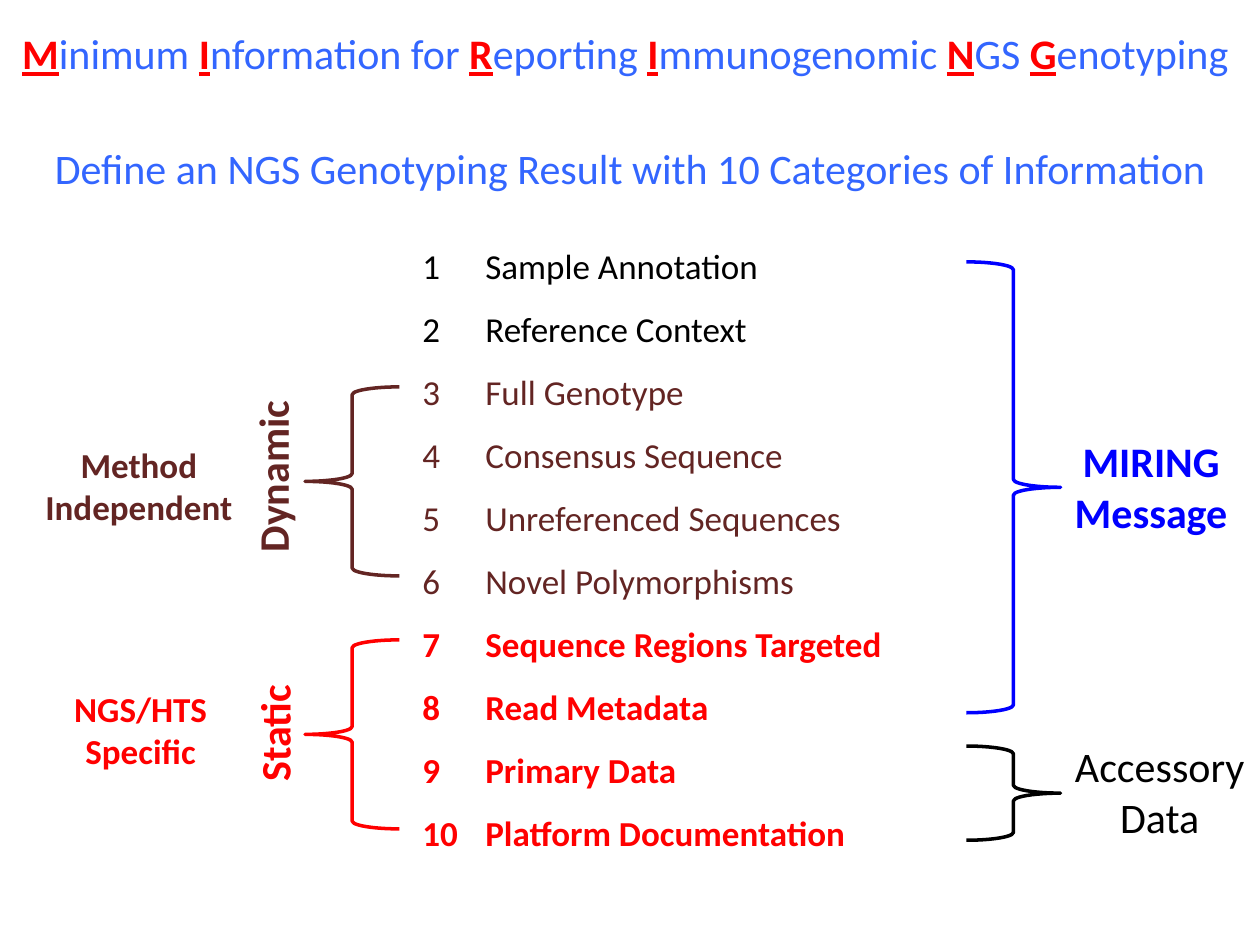
"""Build a slide on the ten information categories of an NGS genotyping result."""
from dataclasses import dataclass

from lxml.etree import SubElement
from pptx import Presentation
from pptx.dml.color import RGBColor as Rgb
from pptx.enum.shapes import MSO_SHAPE as Shape
from pptx.enum.text import MSO_ANCHOR as Anchor, MSO_AUTO_SIZE as AutoSize, PP_ALIGN as Align
from pptx.oxml.ns import qn
from pptx.util import Cm, Pt


@dataclass(frozen=True)
class Theme:
    font: str = "Calibri"
    heading: str = "3366FF"
    plain: str = "000000"
    dynamic: str = "632523"
    static: str = "FF0000"
    message: str = "0000FF"
    large: int = 24
    small: int = 20
    line: int = 2


THEME = Theme()

TITLE = [("M", "inimum "), ("I", "nformation for "), ("R", "eporting "),
         ("I", "mmunogenomic "), ("N", "GS "), ("G", "enotyping ")]
TITLE_PLACE = (0, 0.43, 25.4, 1.27)

LEAD = "Define an NGS Genotyping Result with 10 Categories of Information"
BODY_PLACE = (0.64, 2.74, 24.13, 14.71)
CATEGORY_GROUPS = [
    (THEME.plain, False, ["Sample Annotation", "Reference Context"]),
    (THEME.dynamic, False, ["Full Genotype", "Consensus Sequence",
                            "Unreferenced Sequences", "Novel Polymorphisms"]),
    (THEME.static, True, ["Sequence Regions Targeted", "Read Metadata",
                          "Primary Data", "Platform Documentation"]),
]
LIST_INDENT, NUMBER_HANG = Cm(8.89), Cm(1.27)
ROW_PITCH, LEAD_GAP = Pt(36), Pt(17.5)

BRACE_WIDTH = 1.9
LEFT_BRACE, RIGHT_BRACE = (Shape.LEFT_BRACE, 6.15), (Shape.RIGHT_BRACE, 19.48)
BRACES = [
    (LEFT_BRACE, 7.8, 3.81, THEME.dynamic),
    (LEFT_BRACE, 12.9, 3.81, THEME.static),
    (RIGHT_BRACE, 5.28, 9.09, THEME.message),
    (RIGHT_BRACE, 15.04, 1.9, THEME.plain),
]

LABELS = [
    (["Dynamic"], (3.68, 8.97, 3.61, 1.27), 270, THEME.large, THEME.dynamic, True),
    (["Static"], (4.27, 14.15, 2.51, 1.27), 270, THEME.large, THEME.static, True),
    (["MIRING", "Message"], (21.39, 8.66, 3.63, 2.31), 0, THEME.large, THEME.message, True),
    (["Accessory", "Data"], (21.36, 14.81, 4.04, 2.31), 0, THEME.large, THEME.plain, False),
    (["NGS/HTS", "Specific"], (1.22, 13.74, 3.23, 1.96), 0, THEME.small, THEME.static, True),
    (["Method", "Independent"], (0.64, 8.81, 4.32, 1.96), 0, THEME.small, THEME.dynamic, True),
]


def set_values(target, values):
    for name, value in values.items():
        setattr(target, name, value)


def place(box, lengths):
    set_values(box, dict(zip(("left", "top", "width", "height"), map(Cm, lengths))))


def add_span(para, text, size, color, bold=False, underline=False):
    span = para.add_run()
    span.text = text
    set_values(span.font, {"name": THEME.font, "size": Pt(size),
                           "bold": bold, "underline": underline})
    span.font.color.rgb = Rgb.from_string(color)


def set_list_format(para, indent, hang, bullet, **options):
    properties = para._p.get_or_add_pPr()
    properties.set("marL", str(int(indent)))
    properties.set("indent", str(-int(hang)))
    SubElement(properties, qn(bullet), options)


def fill_title(title):
    place(title, TITLE_PLACE)
    set_values(title.text_frame, {"word_wrap": True, "auto_size": AutoSize.NONE,
                                  "vertical_anchor": Anchor.TOP})
    para = title.text_frame.paragraphs[0]
    para.alignment = Align.CENTER
    for initial, rest in TITLE:
        add_span(para, initial, THEME.large, THEME.static, True, True)
        add_span(para, rest, THEME.large, THEME.heading)


def fill_body(body):
    place(body, BODY_PLACE)
    frame = body.text_frame
    set_values(frame, {"word_wrap": True, "auto_size": AutoSize.NONE})
    lead = frame.paragraphs[0]
    set_values(lead, {"alignment": Align.CENTER, "space_before": Pt(0),
                      "space_after": LEAD_GAP})
    set_list_format(lead, 0, 0, "a:buNone")
    add_span(lead, LEAD, THEME.large, THEME.heading)
    for color, bold, categories in CATEGORY_GROUPS:
        for category in categories:
            para = frame.add_paragraph()
            set_values(para, {"line_spacing": ROW_PITCH, "space_before": Pt(0),
                              "space_after": Pt(0)})
            set_list_format(para, LIST_INDENT, NUMBER_HANG, "a:buFont", typeface="+mj-lt")
            set_list_format(para, LIST_INDENT, NUMBER_HANG, "a:buAutoNum", type="arabicPlain")
            add_span(para, category, THEME.small, color, bold)


def add_brace(page, kind, top, height, color):
    preset, left = kind
    brace = page.shapes.add_shape(preset, *map(Cm, (left, top, BRACE_WIDTH, height)))
    brace.shadow.inherit = False
    brace.fill.background()
    brace.line.color.rgb = Rgb.from_string(color)
    brace.line.width = Pt(THEME.line)


def add_label(page, lines, lengths, rotation, size, color, bold):
    box = page.shapes.add_textbox(*map(Cm, lengths))
    box.rotation = rotation
    frame = box.text_frame
    frame.word_wrap = False
    for index, line in enumerate(lines):
        para = frame.add_paragraph() if index else frame.paragraphs[0]
        para.alignment = Align.CENTER
        add_span(para, line, size, color, bold)


def main():
    deck = Presentation()
    set_values(deck, {"slide_width": Cm(25.4), "slide_height": Cm(19.05)})
    page = deck.slides.add_slide(deck.slide_layouts[1])
    fill_title(page.shapes.title)
    fill_body(page.placeholders[1])
    for brace in BRACES:
        add_brace(page, *brace)
    for label in LABELS:
        add_label(page, *label)
    deck.save("out.pptx")


if __name__ == "__main__":
    main()
